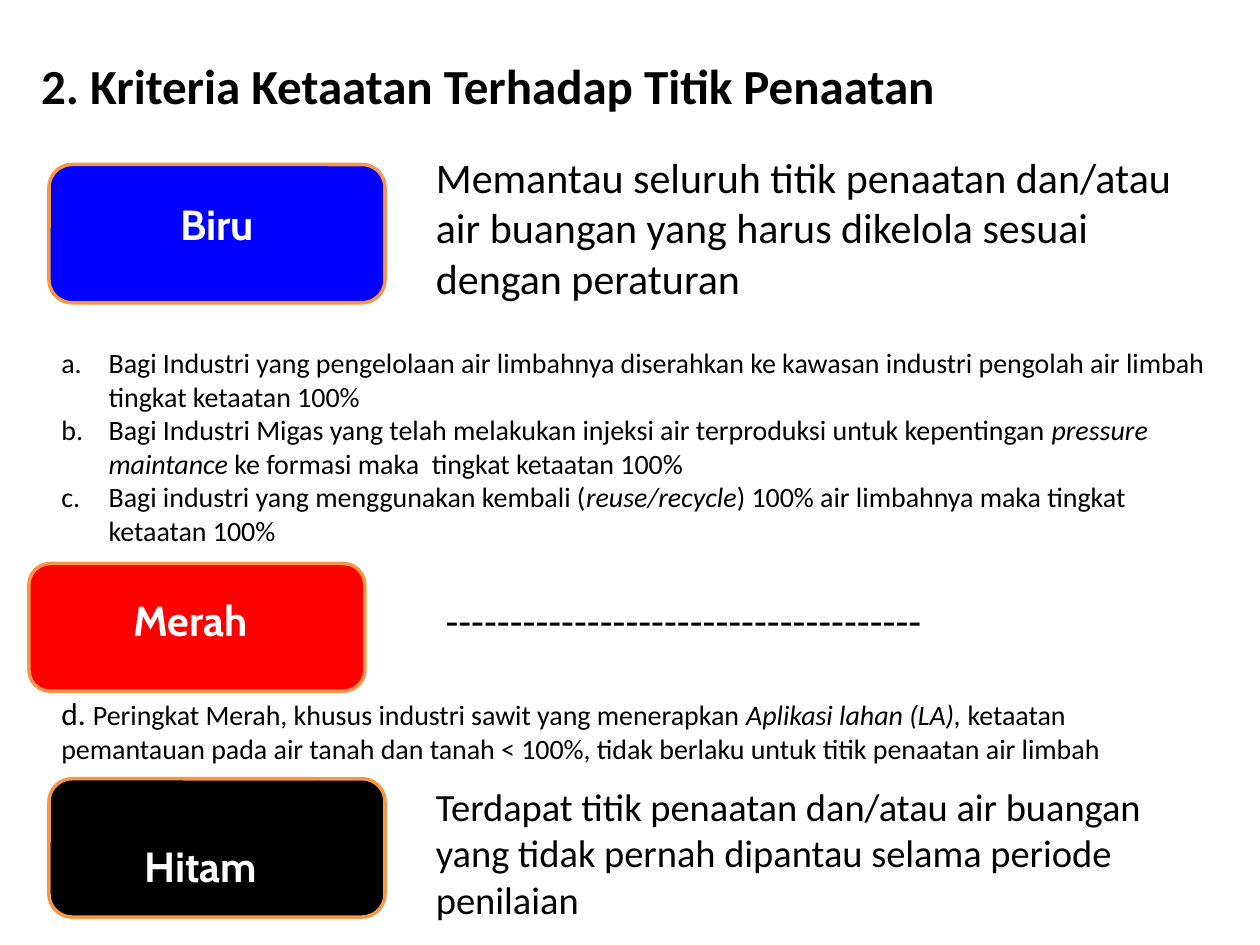
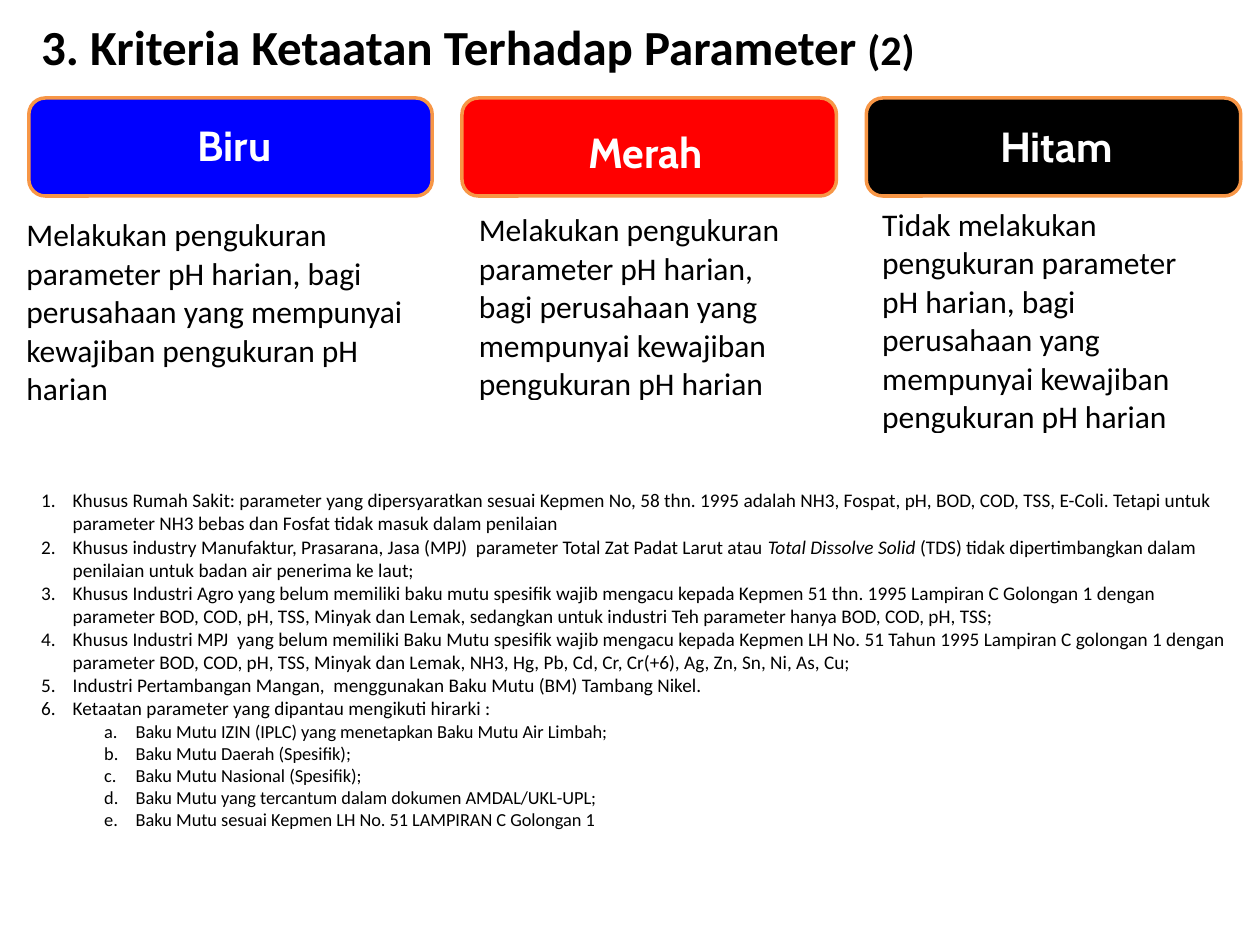
"""Build two slides on compliance criteria for the blue, red and black ratings."""
from lxml import etree
from pptx import Presentation
from pptx.dml.color import RGBColor
from pptx.enum.shapes import MSO_SHAPE
from pptx.enum.text import MSO_ANCHOR
from pptx.oxml.ns import qn
from pptx.util import Pt

ROUNDED = MSO_SHAPE.ROUNDED_RECTANGLE
TOP, MIDDLE = MSO_ANCHOR.TOP, MSO_ANCHOR.MIDDLE
LETTERS, NUMBERS = "alphaLcPeriod", "arabicPeriod"
BODY_FONT, BADGE_FONT = "Calibri", "Cabin"
COLORS = {
    "Biru": "0000FF",
    "Merah": "FF0000",
    "Hitam": "000000",
    "border": "F79646",
    "text": "000000",
    "badge text": "FFFFFF",
}


class Deck:
    """Hold the shared style and the current slide."""

    def __init__(self):
        self.presentation = Presentation()
        self.presentation.slide_width = Pt(720)
        self.presentation.slide_height = Pt(540)
        self.slide = None

    def color(self, name):
        return RGBColor.from_string(COLORS[name])

    def add_runs(self, paragraph, pieces, size, font=BODY_FONT, color="text", bold=False):
        for piece in [pieces] if isinstance(pieces, str) else pieces:
            text, changes = (piece, {}) if isinstance(piece, str) else piece
            run = paragraph.add_run()
            run.text = text
            run.font.name = font
            run.font.size = Pt(changes.get("size", size))
            run.font.bold = bold
            run.font.italic = changes.get("italic", False)
            run.font.color.rgb = self.color(color)

    def frame(self, left, top, width, height, anchor=TOP):
        box = self.slide.shapes.add_textbox(Pt(left), Pt(top), Pt(width), Pt(height))
        box.text_frame.word_wrap = True
        box.text_frame.vertical_anchor = anchor
        return box.text_frame

    def text(self, left, top, width, height, pieces, size, **style):
        text_frame = self.frame(left, top, width, height)
        self.add_runs(text_frame.paragraphs[0], pieces, size, **style)

    def start(self, title, top):
        layout = self.presentation.slide_layouts[6]
        self.slide = self.presentation.slides.add_slide(layout)
        self.text(16.5, top, 540, 41, title, 28, bold=True)

    def badge(self, name, left, top, width, height, label_left, label_top):
        shape = self.slide.shapes.add_shape(ROUNDED, Pt(left), Pt(top), Pt(width), Pt(height))
        shape.shadow.inherit = False
        shape.fill.solid()
        shape.fill.fore_color.rgb = self.color(name)
        shape.line.color.rgb = self.color("border")
        shape.line.width = Pt(2)
        self.text(label_left, label_top, 100, 36, name, 24,
                  font=BADGE_FONT, color="badge text", bold=True)

    def numbered(self, left, top, width, height, items):
        text_frame = self.frame(left, top, width, height, MIDDLE)
        for index, (pieces, size, scheme, level, margin, hanging) in enumerate(items):
            paragraph = text_frame.add_paragraph() if index else text_frame.paragraphs[0]
            paragraph.level = level
            properties = paragraph._p.get_or_add_pPr()
            properties.set("marL", str(Pt(margin)))
            properties.set("indent", str(-Pt(hanging)))
            etree.SubElement(properties, qn("a:buFont"), typeface="+mj-lt")
            etree.SubElement(properties, qn("a:buAutoNum"), type=scheme)
            self.add_runs(paragraph, pieces, size)

    def cell_table(self, left, top, width, height, content):
        table = self.slide.shapes.add_table(
            1, 1, Pt(left), Pt(top), Pt(width), Pt(height)).table
        table.first_row = table.horz_banding = False
        cell = table.cell(0, 0)
        cell.fill.background()
        cell.margin_left = cell.margin_right = Pt(3.6)
        cell.margin_top = cell.margin_bottom = 0
        self.add_runs(cell.text_frame.paragraphs[0], content, 18)


def italic(text):
    return text, {"italic": True}


def build_monitoring_points(deck):
    deck.start("2. Kriteria Ketaatan Terhadap Titik Penaatan", 28)
    deck.badge("Biru", 28, 94, 192, 79, 96, 110)
    deck.badge("Merah", 16.5, 322, 192, 73, 69, 336)
    deck.badge("Hitam", 28, 445, 192, 79, 75.5, 476.5)
    deck.text(242, 83, 444, 94, "Memantau seluruh titik penaatan dan/atau air buangan "
              "yang harus dikelola sesuai dengan peraturan", 24)
    deck.text(247.5, 336, 300, 37, "-" * 37, 24)
    deck.text(242, 444, 456, 87, "Terdapat titik penaatan dan/atau air buangan yang tidak "
              "pernah dipantau selama periode penilaian", 22)
    exceptions = [
        "Bagi Industri yang pengelolaan air limbahnya diserahkan ke kawasan industri "
        "pengolah air limbah tingkat ketaatan 100%",
        ["Bagi Industri Migas yang telah melakukan injeksi air terproduksi untuk kepentingan ",
         italic("pressure maintance"), " ke formasi maka  tingkat ketaatan 100%"],
        ["Bagi industri yang menggunakan kembali (", italic("reuse/recycle"),
         ") 100% air limbahnya maka tingkat ketaatan 100%"],
    ]
    deck.numbered(28, 193, 670, 124,
                  [(item, 16, LETTERS, 0, 27, 27) for item in exceptions])
    deck.text(28, 393, 670, 70, [
        ("d. ", {"size": 18}),
        "Peringkat Merah, khusus industri sawit yang menerapkan ",
        italic("Aplikasi lahan (LA), "),
        "ketaatan pemantauan pada air tanah dan tanah < 100%, tidak berlaku untuk titik "
        "penaatan air limbah"], 16)


def build_parameters(deck):
    deck.start(["3. Kriteria Ketaatan Terhadap Parameter ", ("(2)", {"size": 24})], 6)
    duty = ("elakukan pengukuran parameter pH harian, bagi perusahaan yang mempunyai "
            "kewajiban pengukuran pH harian")
    deck.cell_table(11.5, 124, 242, 108, "M" + duty)
    deck.cell_table(270, 121, 196.5, 108, "M" + duty)
    deck.cell_table(500.5, 118, 191.5, 130, "Tidak m" + duty)
    deck.badge("Biru", 16.5, 56, 230.5, 56, 106, 65)
    deck.badge("Merah", 264, 56, 214, 56, 329, 68.5)
    deck.badge("Hitam", 495, 56, 214, 56, 564.5, 65.5)
    rules = [
        "Khusus Rumah Sakit: parameter yang dipersyaratkan sesuai Kepmen No, 58 thn. 1995 "
        "adalah NH3, Fospat, pH, BOD, COD, TSS, E-Coli. Tetapi untuk parameter NH3 bebas "
        "dan Fosfat tidak masuk dalam penilaian",
        ["Khusus industry Manufaktur, Prasarana, Jasa (MPJ)  parameter Total Zat Padat "
         "Larut atau ", italic("Total Dissolve Solid"),
         " (TDS) tidak dipertimbangkan dalam penilaian untuk badan air penerima ke laut;"],
        "Khusus Industri Agro yang belum memiliki baku mutu spesifik wajib mengacu kepada "
        "Kepmen 51 thn. 1995 Lampiran C Golongan 1 dengan parameter BOD, COD, pH, TSS, "
        "Minyak dan Lemak, sedangkan untuk industri Teh parameter hanya BOD, COD, pH, TSS;",
        "Khusus Industri MPJ  yang belum memiliki Baku Mutu spesifik wajib mengacu kepada "
        "Kepmen LH No. 51 Tahun 1995 Lampiran C golongan 1 dengan parameter BOD, COD, pH, "
        "TSS, Minyak dan Lemak, NH3, Hg, Pb, Cd, Cr, Cr(+6), Ag, Zn, Sn, Ni, As, Cu;",
        "Industri Pertambangan Mangan,  menggunakan Baku Mutu (BM) Tambang Nikel.",
        "Ketaatan parameter yang dipantau mengikuti hirarki :",
    ]
    hierarchy = [
        "Baku Mutu IZIN (IPLC) yang menetapkan Baku Mutu Air Limbah;",
        "Baku Mutu Daerah (Spesifik);",
        "Baku Mutu Nasional (Spesifik);",
        "Baku Mutu yang tercantum dalam dokumen AMDAL/UKL-UPL;",
        "Baku Mutu sesuai Kepmen LH No. 51 LAMPIRAN C Golongan 1",
    ]
    deck.numbered(16.5, 274.5, 692.5, 204.5,
                  [(rule, 11, NUMBERS, 0, 18, 18) for rule in rules]
                  + [(step, 10.5, LETTERS, 1, 54, 18) for step in hierarchy])


def main():
    deck = Deck()
    build_monitoring_points(deck)
    build_parameters(deck)
    deck.presentation.save("out.pptx")


if __name__ == "__main__":
    main()
